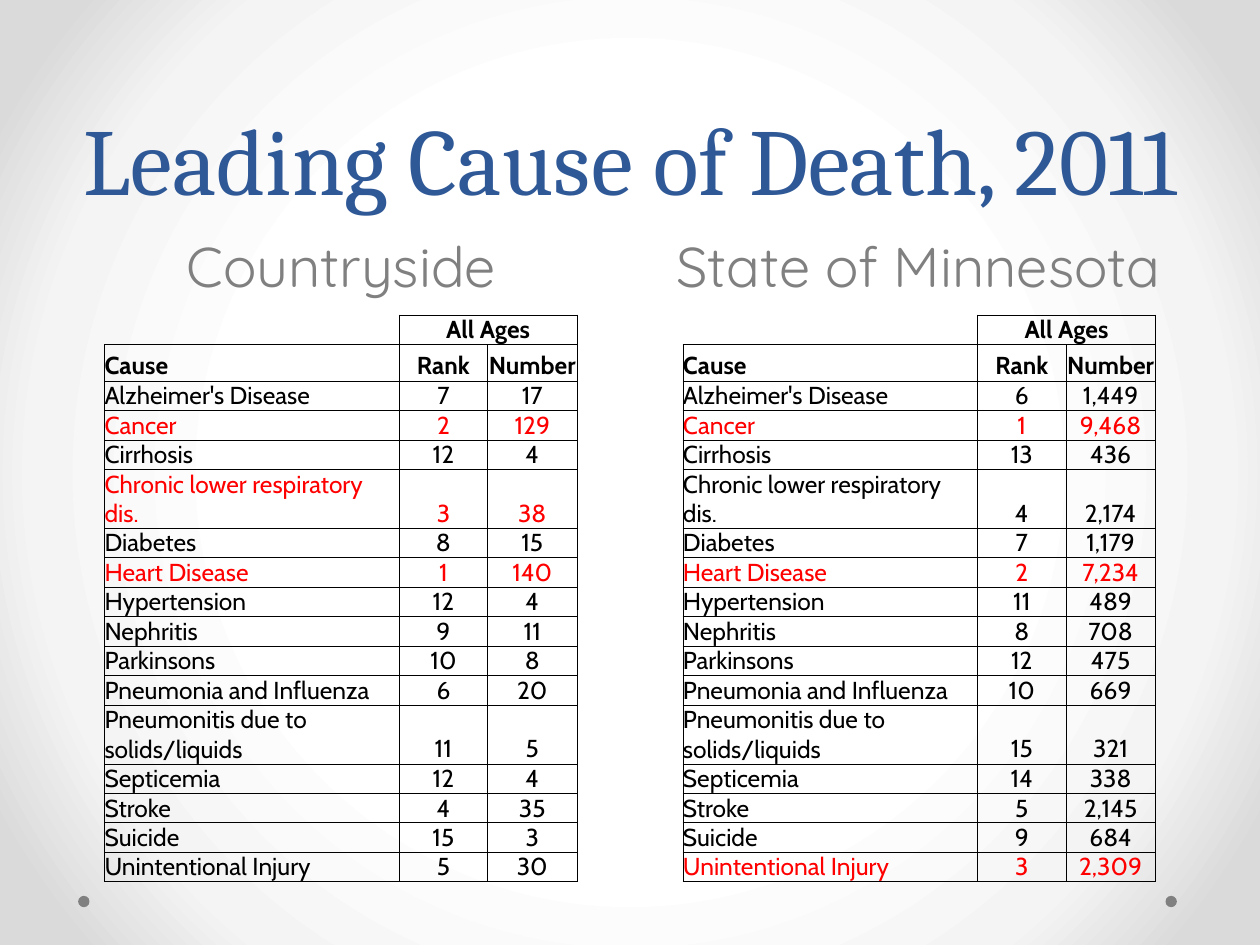
from lxml import etree
from pptx import Presentation
from pptx.dml.color import RGBColor
from pptx.enum.shapes import MSO_SHAPE as SHAPE
from pptx.enum.text import MSO_ANCHOR as ANCHOR, PP_ALIGN as ALIGN
from pptx.oxml import parse_xml
from pptx.oxml.ns import nsdecls, qn
from pptx.util import Inches, Pt

# Content
TITLE = "Leading Cause of Death, 2011"
CAUSES = [
    "Alzheimer's Disease", "Cancer", "Cirrhosis",
    "Chronic lower respiratory dis.", "Diabetes", "Heart Disease",
    "Hypertension", "Nephritis", "Parkinsons", "Pneumonia and Influenza",
    "Pneumonitis due to solids/liquids", "Septicemia", "Stroke", "Suicide",
    "Unintentional Injury",
]
REGIONS = [
    {"name": "Countryside", "head_x": 0.5, "table_x": 0.83,
     "rank": [7, 2, 12, 3, 8, 1, 12, 9, 10, 6, 11, 12, 4, 15, 5],
     "number": [17, 129, 4, 38, 15, 140, 4, 11, 8, 20, 5, 4, 35, 3, 30]},
    {"name": "State of Minnesota", "head_x": 5.08, "table_x": 5.42,
     "rank": [6, 1, 13, 4, 7, 2, 11, 8, 12, 10, 15, 14, 5, 9, 3],
     "number": [1449, 9468, 436, 2174, 1179, 7234, 489, 708, 475, 669, 321,
                338, 2145, 684, 2309]},
]
TOP_RANK = 3  # causes ranked this high are shown in red

COLORS = {"title": "2F5897", "grey": "808080", "text": "000000",
          "top": "FF0000", "border": "000000"}
BACKDROP = [(50, "FFFFFF"), (76, "F4F4F4"), (92, "DADADA")]
COL_WIDTHS = [2.34, 0.7, 0.71]
ROW_H, HEAD_H, TWO_LINE_H = 0.22, 0.29, 0.45


def rgb(name):
    return RGBColor.from_string(COLORS[name])


def add_run(p, text, font, size, color, bold=False):
    r = p.add_run()
    r.text = text
    r.font.name, r.font.size, r.font.bold = font, Pt(size), bold
    r.font.color.rgb = rgb(color)


def add_heading(slide, box, text, font, size, color):
    tf = slide.shapes.add_textbox(*map(Inches, box)).text_frame
    tf.word_wrap = True
    tf.vertical_anchor = ANCHOR.BOTTOM
    p = tf.paragraphs[0]
    p.alignment = ALIGN.CENTER
    add_run(p, text, font, size, color)
    return p


def set_borders(cell, sides):
    """Draw the given sides of a cell and leave the others without a line."""
    tc_pr = cell._tc.get_or_add_tcPr()
    for side in "LRTB":
        ln = etree.SubElement(tc_pr, qn(f"a:ln{side}"), w=str(Pt(0.5)))
        if side in sides:
            fill = etree.SubElement(ln, qn("a:solidFill"))
            etree.SubElement(fill, qn("a:srgbClr"), val=COLORS["border"])
        else:
            etree.SubElement(ln, qn("a:noFill"))


def fill_cell(cell, text, color="text", bold=False, centered=True, sides="LRTB"):
    set_borders(cell, sides)
    cell.fill.background()
    cell.margin_left = cell.margin_right = 0
    cell.margin_top = cell.margin_bottom = 0
    cell.vertical_anchor = ANCHOR.BOTTOM
    p = cell.text_frame.paragraphs[0]
    p.alignment = ALIGN.CENTER if centered else ALIGN.LEFT
    if text:
        add_run(p, text, "Cabin", 14, color, bold)
    else:
        etree.SubElement(p._p, qn("a:endParaRPr"), sz="1400")


def add_cause_table(slide, region):
    heights = [ROW_H, HEAD_H] + [
        TWO_LINE_H if cause.startswith("Pneumonitis") else ROW_H for cause in CAUSES]
    table = slide.shapes.add_table(
        len(heights), len(COL_WIDTHS), Inches(region["table_x"]), Inches(2.5),
        Inches(sum(COL_WIDTHS)), Inches(sum(heights))).table
    table.first_row = table.horz_banding = False
    for col, width in zip(table.columns, COL_WIDTHS):
        col.width = Inches(width)
    for row, height in zip(table.rows, heights):
        row.height = Inches(height)

    # Two header rows
    table.cell(0, 1).merge(table.cell(0, 2))
    for c, text in enumerate(["", "All Ages", ""]):
        fill_cell(table.cell(0, c), text, bold=True, sides="LRTB" if c else "RB")
    for c, text in enumerate(["Cause", "Rank", "Number"]):
        fill_cell(table.cell(1, c), text, bold=True, centered=c > 0)

    # One row for each cause
    data = zip(CAUSES, region["rank"], region["number"])
    for r, (cause, rank, number) in enumerate(data, start=2):
        color = "top" if rank <= TOP_RANK else "text"
        for c, text in enumerate([cause, str(rank), f"{number:,}"]):
            fill_cell(table.cell(r, c), text, color, centered=c > 0)


def set_backdrop(slide):
    stops = "".join(f'<a:gs pos="{pos * 1000}"><a:srgbClr val="{color}"/></a:gs>'
                    for pos, color in BACKDROP)
    bg = parse_xml(
        f'<p:bg {nsdecls("p", "a")}><p:bgPr><a:gradFill rotWithShape="1">'
        f'<a:gsLst>{stops}</a:gsLst><a:path path="circle">'
        '<a:fillToRect l="50000" t="50000" r="50000" b="50000"/></a:path>'
        '</a:gradFill><a:effectLst/></p:bgPr></p:bg>')
    slide.element.cSld.insert(0, bg)


def main():
    prs = Presentation()
    prs.slide_width, prs.slide_height = Inches(10), Inches(7.5)
    slide = prs.slides.add_slide(prs.slide_layouts[6])
    set_backdrop(slide)

    # Corner dots
    for x in (9.25, 0.62):
        dot = slide.shapes.add_shape(
            SHAPE.OVAL, Inches(x), Inches(7.11), Inches(0.09), Inches(0.09))
        dot.shadow.inherit = False
        dot.fill.solid()
        dot.fill.fore_color.rgb = rgb("grey")
        dot.line.fill.background()

    # Title, then a heading and a table for each region
    p = add_heading(slide, (0.5, 0, 9, 1.75), TITLE, "Cambria", 54, "title")
    p.line_spacing = Pt(58)
    for region in REGIONS:
        add_heading(slide, (region["head_x"], 1.75, 4.42, 0.67),
                    region["name"], "Quicksand", 32, "grey")
    for region in REGIONS:
        add_cause_table(slide, region)

    prs.save("out.pptx")


if __name__ == "__main__":
    main()
